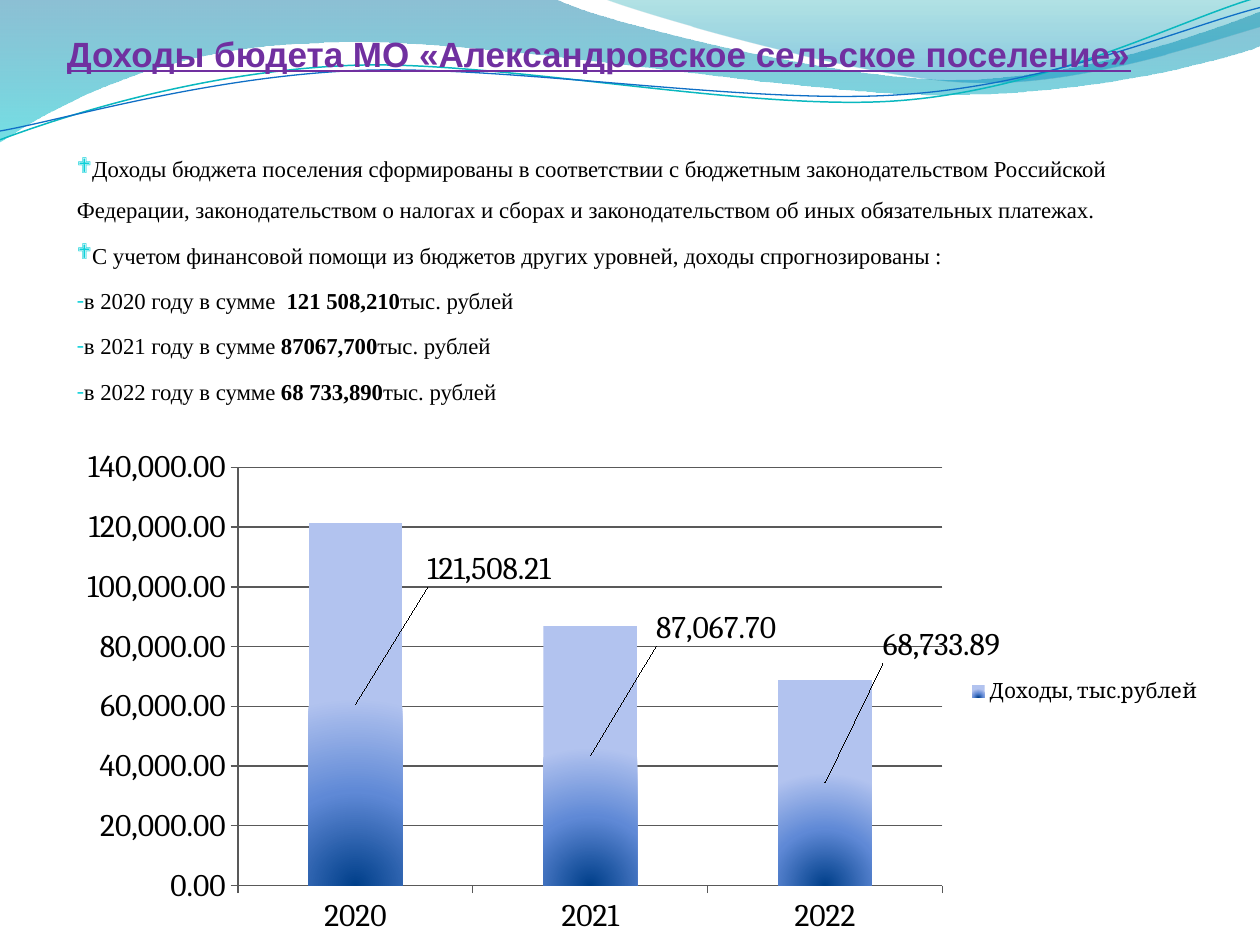
from lxml import etree
from pptx import Presentation
from pptx import util as u
from pptx.chart.data import CategoryChartData
from pptx.dml.color import RGBColor
from pptx.enum import chart as ch, text
from pptx.oxml import parse_xml
from pptx.oxml.ns import nsdecls, qn

HUES = {"ink": "000000", "title": "7030A0", "bullet": "0BD0D9", "grid": "595959",
        "teal": "0AB8BF", "blue": "0F6FC6"}
COLS = 100
LIN = '<a:lin ang="5400000" scaled="0"/>'
RADIAL = ('<a:path path="circle"><a:fillToRect l="50000" t="100000" r="50000" b="0"/>'
          '</a:path>')
NOLEAD = ('<c:extLst %s><c:ext uri="{CE6537A1-D6FC-4f65-9D91-7224C49458BB}" '
          'xmlns:c15="http://schemas.microsoft.com/office/drawing/2012/chart">'
          '<c15:showLeaderLines val="0"/></c:ext></c:extLst>' % nsdecls("c"))


class Deck:
    def __init__(self):
        self.prs = Presentation()
        self.prs.slide_width, self.prs.slide_height = u.Inches(10), u.Inches(7.5)
        self.cell = self.prs.slide_width / COLS
        self.slide = self.prs.slides.add_slide(self.prs.slide_layouts[5])

    def span(self, *cells):
        return [round(c * self.cell) for c in cells]

    def hue(self, name):
        return RGBColor.from_string(HUES[name])

    def font(self, font, name, size, hue="ink", **more):
        values = {"name": name, "size": u.Pt(size), **more}
        for key, value in values.items():
            setattr(font, key, value)
        font.color.rgb = self.hue(hue)

    def frame(self, box, **values):
        for key, value in {"word_wrap": True, "auto_size": text.MSO_AUTO_SIZE.NONE,
                           **values}.items():
            setattr(box.text_frame, key, value)
        return box.text_frame

    def blend(self, fill, owner, stops, way):
        """Fill with stops of (place, colour, opacity), all in percent."""
        fill.background()
        marks = "".join(
            f'<a:gs pos="{p * 1000}"><a:srgbClr val="{c}"><a:alpha val="{o * 1000}"/>'
            f'</a:srgbClr></a:gs>' for p, c, o in stops)
        props = owner.find(qn("p:spPr"))
        if props is None:
            props = owner.find(qn("c:spPr"))
        props.replace(props.find(qn("a:noFill")), parse_xml(
            f'<a:gradFill {nsdecls("a")} rotWithShape="1"><a:gsLst>{marks}</a:gsLst>'
            f'{way}</a:gradFill>'))

    def wave(self, start, parts, stops=None, line=None):
        """Draw lines (x, y) and cubic curves (six numbers) from start on."""
        pts = [self.span(*part[i:i + 2]) for part in parts
               for i in range(0, len(part), 2)]
        pen = self.slide.shapes.build_freeform(*self.span(*start), scale=1.0)
        pen.add_line_segments(pts, close=bool(stops))
        shape = pen.convert_to_shape()
        legs = iter(list(shape._element.iter(qn("a:lnTo"))))
        for part in parts:
            leg = next(legs)
            if len(part) == 6:
                leg.addprevious(curve := etree.Element(qn("a:cubicBezTo")))
                for old in (leg, next(legs), next(legs)):
                    curve.append(old[0])
                    old.getparent().remove(old)
        shape.shadow.inherit = False
        if stops:
            self.blend(shape.fill, shape._element, stops, LIN)
            shape.line.fill.background()
        else:
            shape.fill.background()
            shape.line.color.rgb = self.hue(line[0])
            shape.line.width = u.Pt(line[1])

    def title(self, words, *area):
        box = self.slide.shapes.title
        box.left, box.top, box.width, box.height = self.span(*area)
        para = self.frame(box, vertical_anchor=text.MSO_ANCHOR.MIDDLE).paragraphs[0]
        para.alignment = text.PP_ALIGN.LEFT
        run = para.add_run()
        run.text = words
        self.font(run.font, "Arial", 20, "title", bold=True, underline=True)
        self.slide.shapes._spTree.append(box._element)  # in front of the waves

    def bullets(self, items, *area):
        """Each item is a bullet sign and its runs; every second run is bold."""
        box = self.slide.shapes.add_textbox(*self.span(*area))
        frame = self.frame(box, margin_left=u.Inches(0.02), margin_right=u.Inches(0.02))
        for i, (sign, *runs) in enumerate(items):
            para = frame.add_paragraph() if i else frame.paragraphs[0]
            para.line_spacing, para.space_before = u.Pt(23.5), u.Pt(2.4)
            props = para._p.get_or_add_pPr()
            color = etree.SubElement(props, qn("a:buClr"))
            etree.SubElement(color, qn("a:srgbClr"), val=HUES["bullet"])
            etree.SubElement(props, qn("a:buSzPct"), val="95000")
            face = "Times New Roman" if sign == "-" else "Wingdings"
            etree.SubElement(props, qn("a:buFont"), typeface=face)
            etree.SubElement(props, qn("a:buChar"), char=sign)
            for j, words in enumerate(runs):
                run = para.add_run()
                run.text = words
                self.font(run.font, "Times New Roman", 13, bold=j % 2 == 1)

    def place(self, owner, spot, **modes):
        """Give a chart part a manual layout as shares of the chart."""
        tags = "".join(f'<c:{k} val="{v}"/>' for k, v in {**modes, **spot}.items())
        old = owner.find(qn("c:layout"))
        if old is not None:
            owner.remove(old)
        layout = parse_xml(f'<c:layout {nsdecls("c")}><c:manualLayout>{tags}'
                           f'</c:manualLayout></c:layout>')
        owner.insert(1 if owner.tag == qn("c:dLbl") else 0, layout)

    def columns(self, cats, name, values, shifts, stops, area, inner):
        left, top, wide, high = area
        data = CategoryChartData(number_format="#,##0.00")
        data.categories = cats
        data.add_series(name, values)
        chart = self.slide.shapes.add_chart(
            ch.XL_CHART_TYPE.COLUMN_STACKED, *self.span(*area), data).chart
        self.font(chart.font, "Cambria", 18)
        chart.has_title = False
        chart.has_legend = True
        chart.legend.position = ch.XL_LEGEND_POSITION.RIGHT
        chart.legend.include_in_layout = False
        self.font(chart.legend.font, "Cambria", 12)
        axis = chart.value_axis
        axis.minimum_scale, axis.maximum_scale, axis.major_unit = 0, 140000, 20000
        axis.tick_labels.number_format = "#,##0.00"
        axis.tick_labels.number_format_is_linked = False
        for side in (axis, chart.category_axis):
            side.major_tick_mark = ch.XL_TICK_MARK.OUTSIDE
            side.format.line.color.rgb = self.hue("grid")
        axis.major_gridlines.format.line.color.rgb = self.hue("grid")
        plot = chart.plots[0]
        plot.gap_width, plot.overlap, plot.vary_by_categories = 150, 100, False
        bars = plot.series[0]
        self.blend(bars.format.fill, bars._element, stops, RADIAL)
        labels = bars.data_labels
        labels.show_value = True
        labels.number_format, labels.number_format_is_linked = "#,##0.00", False
        self.font(labels.font, "Cambria", 18)
        for i, (x, y) in enumerate(shifts):
            label = bars.points[i].data_label
            self.font(label.font, "Cambria", 18)
            self.place(label._dLbl, {"x": x / wide, "y": y / high})
        labels._element.append(parse_xml(NOLEAD))
        x, y, w, h = inner
        self.place(chart._chartSpace.chart.plotArea,
                   {"x": (x - left) / wide, "y": (y - top) / high,
                    "w": w / wide, "h": h / high},
                   layoutTarget="inner", xMode="edge", yMode="edge")


def main():
    deck = Deck()
    deck.wave((0, 0), [
        (44, -0.1), (47.6, 1.7, 66.4, 6.3, 75.8, 6.3), (85.3, 6.3, 95.8, 2.6, 100, 0.9),
        (100.1, 3.6), (98.3, 4.4, 87, 7.6, 74.6, 7.5), (62.2, 7.5, 38.2, 2.8, 25.7, 3.4),
        (12.9, 3.6, 4.6, 8.3, -0.1, 11.3), (0, 0)],
        stops=[(0, "0074A1", 45), (100, "00C6CF", 55)])
    deck.wave((47.9, -0.1), [
        (50.9, 1.1, 68.2, 6.2, 76.9, 6.5), (85.6, 6.9, 96.1, 3.2, 100, 2.1), (100, 0),
        (47.9, -0.1)], stops=[(0, "00A1A9", 30), (80, "008BBF", 45)])
    deck.wave((0, 11.1), [
        (4.8, 9.3, 15.8, 5.7, 27.7, 5.2), (39.5, 4.7, 59.3, 8.9, 71.3, 8),
        (83.3, 7.1, 93.8, 1.5, 99.8, -0.2)], line=("teal", 0.85))
    deck.wave((0, 10.4), [
        (4.7, 9.6, 16.4, 6.1, 28.3, 5.6), (40.3, 5.1, 59.7, 8.4, 71.7, 7.5),
        (83.6, 6.7, 94.1, 2.1, 100, 0.6)], line=("blue", 0.75))
    deck.bullets([
        ("❖", "Доходы бюджета поселения сформированы в соответствии с бюджетным "
              "законодательством Российской Федерации, законодательством о налогах и "
              "сборах и законодательством об иных обязательных платежах."),
        ("❖", "С учетом финансовой помощи из бюджетов других уровней, "
              "доходы спрогнозированы :"),
        ("-", "в 2020 году в сумме  ", "121 508,210", "тыс. рублей"),
        ("-", "в 2021 году в сумме ", "87067,700", "тыс. рублей"),
        ("-", "в 2022 году в сумме ", "68 733,890", "тыс. рублей"),
    ], 5.9, 10.7, 86.6, 22.8)
    deck.columns(("2020", "2021", "2022"), "Доходы, тыс.рублей",
                 (121508.21, 87067.7, 68733.89),
                 ((10.6, -10.7), (10, -10.15), (9.25, -10.95)),
                 [(0, "003F8A", 100), (50, "5F89D6", 100), (100, "B2C3EF", 100)],
                 (5.1, 34.8, 91.3, 40.2), (18.9, 37.1, 55.9, 33.2))
    deck.title("Доходы бюдета МО «Александровское сельское поселение»",
               4.3, 2.05, 90.6, 4.4)
    deck.prs.save("out.pptx")


if __name__ == "__main__":
    main()
